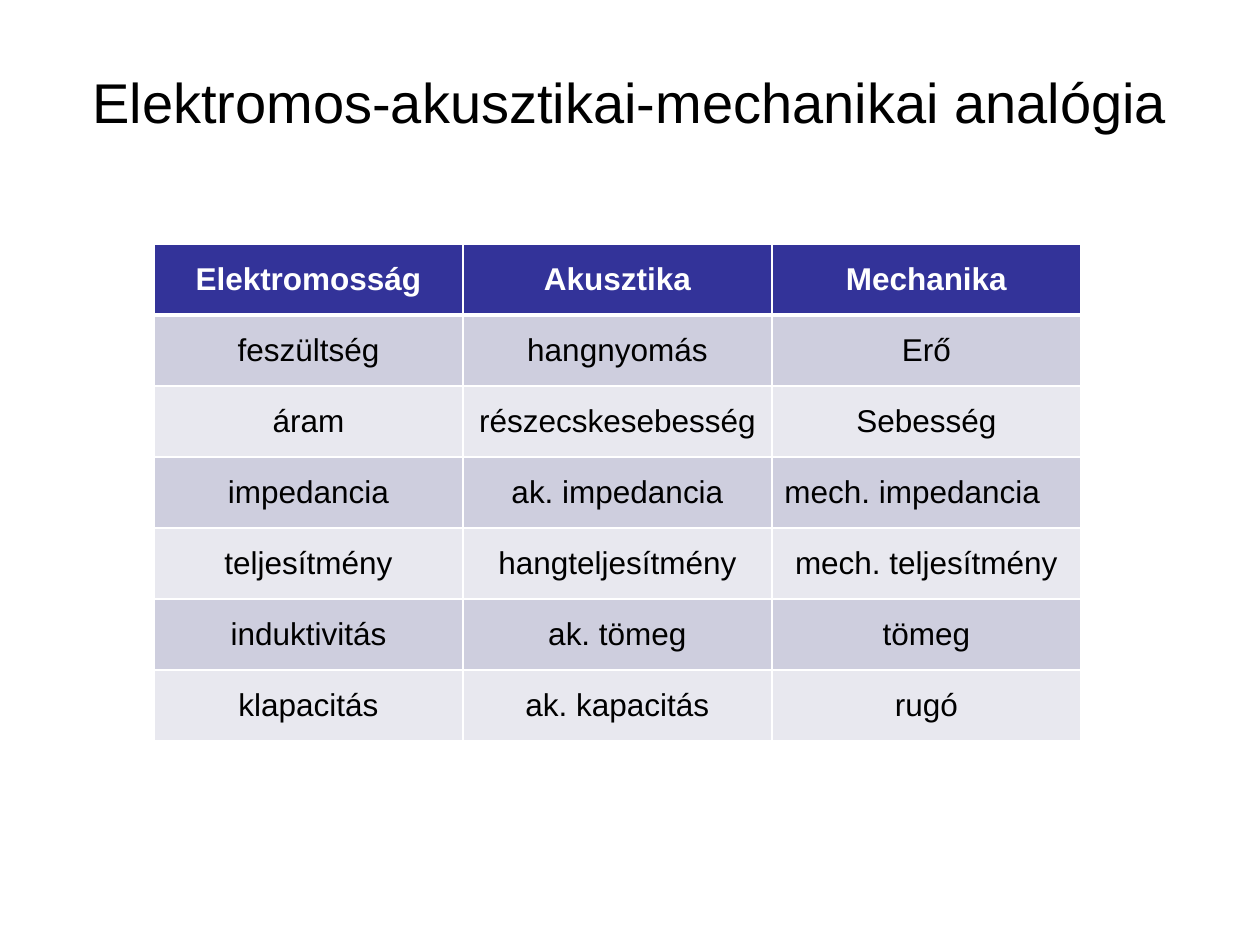
import pptx
import pptx.dml.color
import pptx.enum.text
import pptx.oxml
import pptx.oxml.ns
import pptx.util

PX = 914400 // 126
FONT = "Arial"
COLORS = {
    "text": "000000",
    "white": "FFFFFF",
    "header": "333399",
    "odd": "CECEDE",
    "even": "E8E8EF",
}
ALIGN = pptx.enum.text.PP_ALIGN
MIDDLE = pptx.enum.text.MSO_ANCHOR.MIDDLE

TITLE = "Elektromos-akusztikai-mechanikai analógia"
ANALOGIES = [
    ("Elektromosság", "Akusztika", "Mechanika"),
    ("feszültség", "hangnyomás", "Erő"),
    ("áram", "részecskesebesség", "Sebesség"),
    ("impedancia", "ak. impedancia", "mech. impedancia"),
    ("teljesítmény", "hangteljesítmény", "mech. teljesítmény"),
    ("induktivitás", "ak. tömeg", "tömeg"),
    ("klapacitás", "ak. kapacitás", "rugó"),
]
LEFT_ALIGNED = {"mech. impedancia"}


def rgb(name):
    return pptx.dml.color.RGBColor.from_string(COLORS[name])


def write(frame, text, size=18, color="text", bold=False, align=ALIGN.CENTER):
    para = frame.paragraphs[0]
    para.alignment = align
    span = para.add_run()
    span.text = text
    span.font.name = FONT
    span.font.size = pptx.util.Pt(size)
    span.font.bold = bold
    span.font.color.rgb = rgb(color)


def add_borders(cell, bottom, top):
    """Draw white cell borders; widths are in points."""
    properties = cell._tc.get_or_add_tcPr()
    for side, width in (("L", 1), ("R", 1), ("T", top), ("B", bottom)):
        properties.append(pptx.oxml.parse_xml(
            f'<a:ln{side} {pptx.oxml.ns.nsdecls("a")} w="{pptx.util.Pt(width)}">'
            f'<a:solidFill><a:srgbClr val="{COLORS["white"]}"/></a:solidFill>'
            f'</a:ln{side}>'))


class SlideBuilder:
    def __init__(self, deck):
        self.page = deck.slides.add_slide(deck.slide_layouts[6])

    def title(self, text, left, top, width, height):
        box = self.page.shapes.add_textbox(
            left * PX, top * PX, width * PX, height * PX)
        frame = box.text_frame
        frame.word_wrap = True
        frame.vertical_anchor = MIDDLE
        write(frame, text, size=32)

    def table(self, rows, left, top, column_width, row_height):
        count = len(rows[0])
        table = self.page.shapes.add_table(
            len(rows), count, left * PX, top * PX,
            count * column_width * PX, len(rows) * row_height * PX).table
        for column in table.columns:
            column.width = column_width * PX
        for index, texts in enumerate(rows):
            table.rows[index].height = row_height * PX
            header = index == 0
            fill = "header" if header else "odd" if index % 2 else "even"
            for cell, text in zip(table.rows[index].cells, texts):
                add_borders(cell, bottom=3 if header else 1,
                            top=3 if index == 1 else 1)
                cell.fill.solid()
                cell.fill.fore_color.rgb = rgb(fill)
                cell.vertical_anchor = MIDDLE
                write(cell.text_frame, text, bold=header,
                      color="white" if header else "text",
                      align=ALIGN.LEFT if text in LEFT_ALIGNED else ALIGN.CENTER)


def main():
    deck = pptx.Presentation()
    deck.slide_width = pptx.util.Inches(10)
    deck.slide_height = pptx.util.Inches(7.5)
    builder = SlideBuilder(deck)
    builder.title(TITLE, 63, 38, 1134, 127)
    builder.table(ANALOGIES, 154, 244, column_width=309, row_height=71)
    deck.save("out.pptx")


if __name__ == "__main__":
    main()
